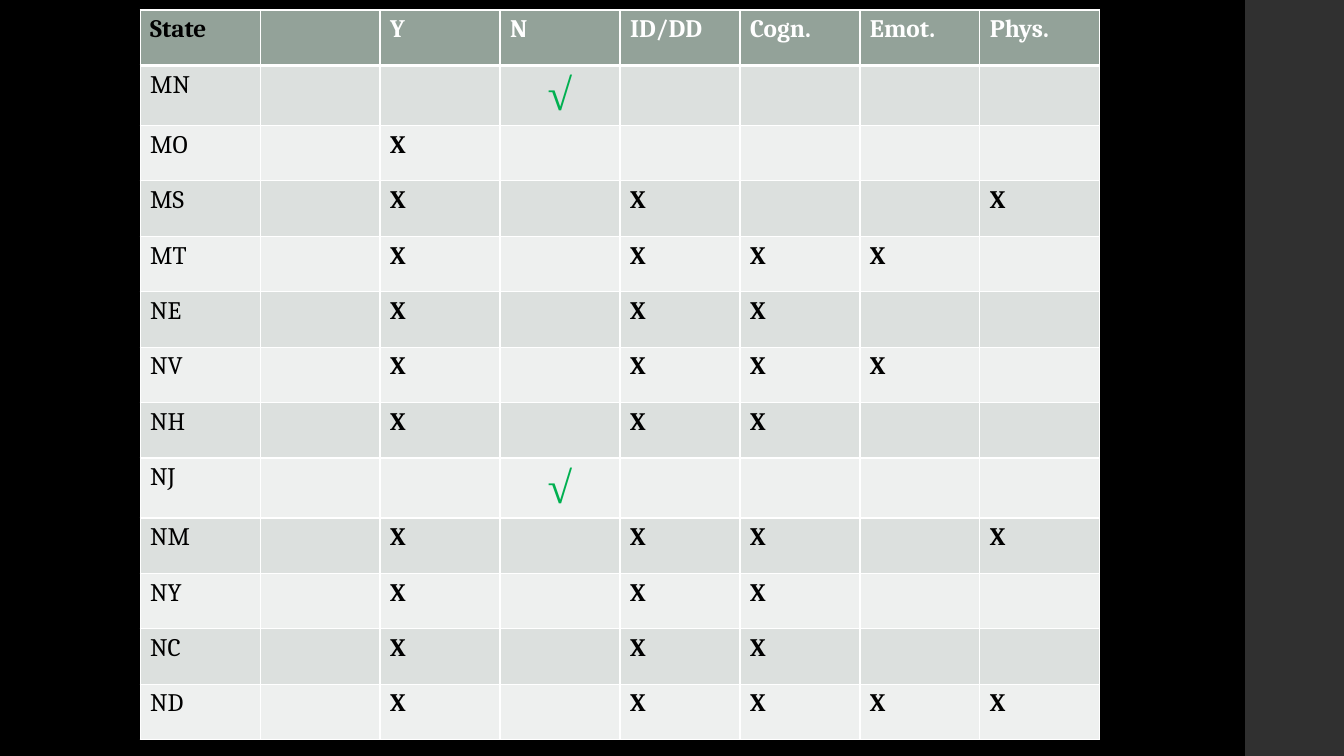
from lxml import etree
from pptx import Presentation
from pptx.dml.color import RGBColor
from pptx.enum.shapes import MSO_SHAPE
from pptx.enum.text import PP_ALIGN
from pptx.oxml.ns import qn
from pptx.util import Inches, Pt

RECTANGLE = MSO_SHAPE.RECTANGLE
CENTER = PP_ALIGN.CENTER

HEADERS = ["State", "", "Y", "N", "ID/DD", "Cogn.", "Emot.", "Phys."]
STATES = [
    ("MN", ["N"]),
    ("MO", ["Y"]),
    ("MS", ["Y", "ID/DD", "Phys."]),
    ("MT", ["Y", "ID/DD", "Cogn.", "Emot."]),
    ("NE", ["Y", "ID/DD", "Cogn."]),
    ("NV", ["Y", "ID/DD", "Cogn.", "Emot."]),
    ("NH", ["Y", "ID/DD", "Cogn."]),
    ("NJ", ["N"]),
    ("NM", ["Y", "ID/DD", "Cogn.", "Phys."]),
    ("NY", ["Y", "ID/DD", "Cogn."]),
    ("NC", ["Y", "ID/DD", "Cogn."]),
    ("ND", ["Y", "ID/DD", "Cogn.", "Emot.", "Phys."]),
]

WIDTH, HEIGHT = 13.33, 7.5
BAND_LEFT = 12.35
TABLE_LEFT, TABLE_TOP = 1.39, 0.1
COLUMN_WIDTH, ROW_HEIGHT = 1.19, 0.55
BLACK, WHITE, GREEN = "000000", "FFFFFF", "00B050"
BAND_FILL, HEADER_FILL = "303030", "93A299"
ROW_FILLS = ["EEF0EF", "DCE0DE"]


def color(value):
    return RGBColor.from_string(value)


def paint(target, value):
    target.fill.solid()
    target.fill.fore_color.rgb = color(value)


def add_borders(cell, row):
    properties = cell._tc.get_or_add_tcPr()
    widths = {"a:lnL": 1, "a:lnR": 1, "a:lnT": 3 if row == 1 else 1, "a:lnB": 3 if row == 0 else 1}
    for side, width in widths.items():
        line = etree.SubElement(properties, qn(side), w=str(Pt(width)))
        fill = etree.SubElement(line, qn("a:solidFill"))
        etree.SubElement(fill, qn("a:srgbClr"), val=WHITE)


def write(cell, text, ink, bold):
    para = cell.text_frame.paragraphs[0]
    span = para.add_run()
    span.text = text
    span.font.name, span.font.size = "Cambria", Pt(18)
    span.font.bold = bold
    span.font.color.rgb = color(ink)
    if text == "√":
        para.alignment = CENTER
        span.font.name, span.font.size = "Times New Roman", Pt(32)


def mark(header, marked):
    if header not in marked:
        return ""
    return "√" if header == "N" else "X"


def add_state_table(page):
    rows = [HEADERS] + [
        [state] + [mark(header, marked) for header in HEADERS[1:]] for state, marked in STATES
    ]
    table = page.shapes.add_table(
        len(rows), len(HEADERS), Inches(TABLE_LEFT), Inches(TABLE_TOP),
        Inches(COLUMN_WIDTH * len(HEADERS)), Inches(ROW_HEIGHT * len(rows)),
    ).table
    for column in table.columns:
        column.width = Inches(COLUMN_WIDTH)
    for row, texts in enumerate(rows):
        table.rows[row].height = Inches(ROW_HEIGHT)
        for column, text in enumerate(texts):
            cell = table.cell(row, column)
            add_borders(cell, row)
            paint(cell, ROW_FILLS[row % 2] if row else HEADER_FILL)
            if text:
                ink = GREEN if text == "√" else WHITE if row == 0 and column else BLACK
                write(cell, text, ink, row == 0 or column > 0)


def main():
    deck = Presentation()
    deck.slide_width, deck.slide_height = Inches(WIDTH), Inches(HEIGHT)
    page = deck.slides.add_slide(deck.slide_layouts[6])
    paint(page.background, BLACK)
    band = page.shapes.add_shape(
        RECTANGLE, Inches(BAND_LEFT), 0, Inches(WIDTH - BAND_LEFT), Inches(HEIGHT)
    )
    band.shadow.inherit = False
    paint(band, BAND_FILL)
    band.line.fill.background()
    add_state_table(page)
    deck.save("out.pptx")


if __name__ == "__main__":
    main()
